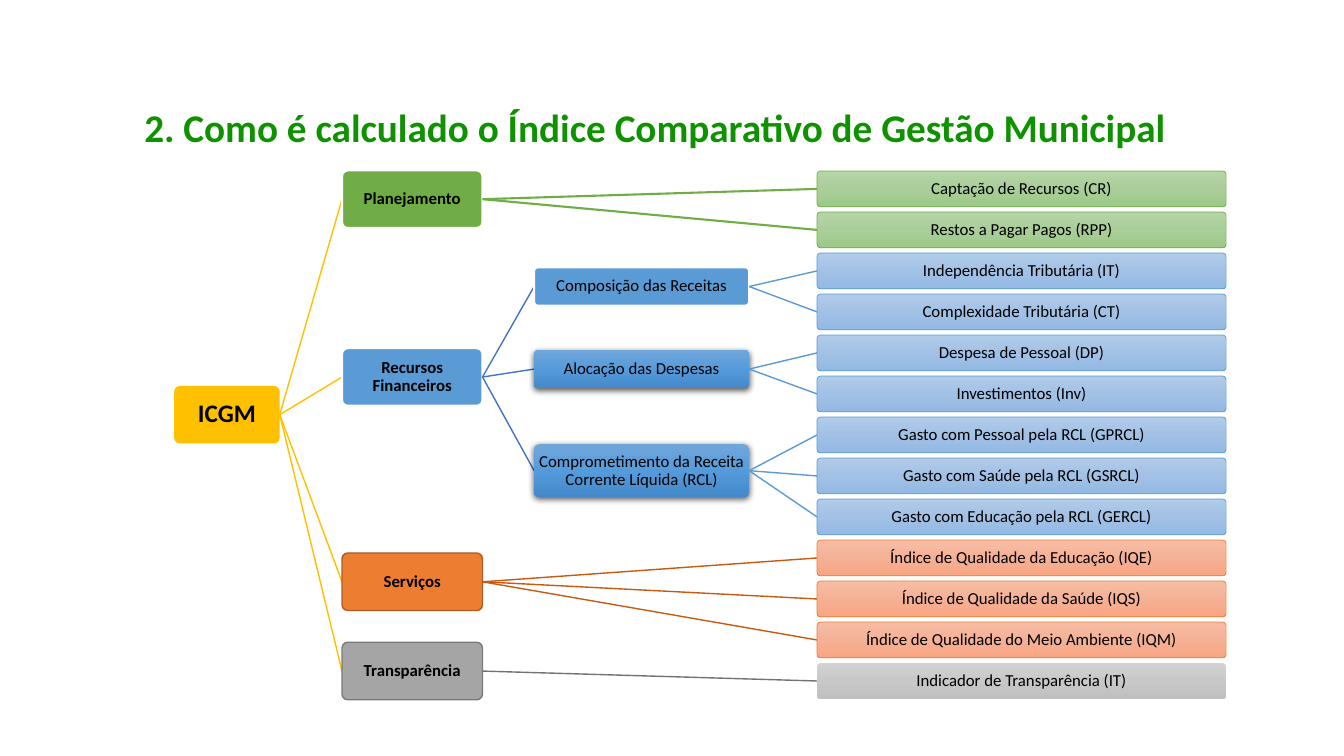
from copy import deepcopy

from lxml import etree
from pptx import Presentation
from pptx.dml.color import RGBColor
from pptx.enum.shapes import MSO_CONNECTOR, MSO_SHAPE
from pptx.enum.text import MSO_ANCHOR, MSO_AUTO_SIZE, PP_ALIGN
from pptx.oxml.ns import qn
from pptx.util import Cm, Pt

TITLE = "2. Como é calculado o Índice Comparativo de Gestão Municipal"

# Each node: text, level, style, centre height in cm (None for evenly spaced indicators), children
TREE = ("ICGM", "root", "gold", 10.45, [
    ("Planejamento", "area", "green", 5.02, [
        ("Captação de Recursos (CR)", "indicator", "light green", None, []),
        ("Restos a Pagar Pagos (RPP)", "indicator", "light green", None, []),
    ]),
    ("Recursos Financeiros", "area", "blue", 9.5, [
        ("Composição das Receitas", "group", "flat blue", 7.22, [
            ("Independência Tributária (IT)", "indicator", "light blue", None, []),
            ("Complexidade Tributária (CT)", "indicator", "light blue", None, []),
        ]),
        ("Alocação das Despesas", "group", "raised blue", 9.3, [
            ("Despesa de Pessoal (DP)", "indicator", "light blue", None, []),
            ("Investimentos (Inv)", "indicator", "light blue", None, []),
        ]),
        ("Comprometimento da Receita Corrente Líquida (RCL)", "tall group", "raised blue", 11.86, [
            ("Gasto com Pessoal pela RCL (GPRCL)", "indicator", "light blue", None, []),
            ("Gasto com Saúde pela RCL (GSRCL)", "indicator", "light blue", None, []),
            ("Gasto com Educação pela RCL (GERCL)", "indicator", "light blue", None, []),
        ]),
    ]),
    ("Serviços", "area", "orange", 14.66, [
        ("Índice de Qualidade da Educação (IQE)", "indicator", "light orange", None, []),
        ("Índice de Qualidade da Saúde (IQS)", "indicator", "light orange", None, []),
        ("Índice de Qualidade do Meio Ambiente (IQM)", "indicator", "light orange", None, []),
    ]),
    ("Transparência", "area", "gray", 16.91, [
        ("Indicador de Transparência (IT)", "indicator", "light gray", None, []),
    ]),
])

# Left, width, height in cm, then font size and weight
LEVELS = {
    "root": (4.39, 2.66, 1.45, 18, True),
    "area": (8.62, 3.54, 1.45, 12, True),
    "group": (13.46, 5.42, 0.97, 12, False),
    "tall group": (13.46, 5.42, 1.33, 12, False),
    "indicator": (20.59, 10.31, 0.9, 12, False),
}
FIRST_INDICATOR, LAST_INDICATOR, INDICATOR_COUNT = 4.76, 17.16, 13
PITCH = (LAST_INDICATOR - FIRST_INDICATOR) / (INDICATOR_COUNT - 1)

# Fill colours (three make a gradient), outline, link to the children
STYLES = {
    "gold": (["FFC000"], None, ("FFC000", 1)),
    "green": (["70AD47"], ("FFFFFF", 1.5), ("70AD47", 1.5)),
    "blue": (["5B9BD5"], ("FFFFFF", 1.5), ("4472C4", 1)),
    "orange": (["ED7D31"], ("AF5C24", 1), ("C55A11", 1)),
    "gray": (["A5A5A5"], ("7A7A7A", 1), ("767171", 1)),
    "flat blue": (["5B9BD5"], ("FFFFFF", 1.5), ("5B9BD5", 1)),
    "raised blue": (["71A6DB", "559BDB", "448ACA"], None, ("5B9BD5", 1)),
    "light green": (["B5D5A7", "AACE9A", "9CC987"], ("70AD47", 0.5), None),
    "light blue": (["B1CBE9", "A3C1E5", "93B9E4"], ("5B9BD5", 0.5), None),
    "light orange": (["F7BDA5", "F5B196", "F8A582"], ("ED7D31", 0.5), None),
    "light gray": (["D2D2D2", "C8C8C8", "C0C0C0"], None, None),
}


def rgb(code):
    return RGBColor.from_string(code)


def paint(shape, colours):
    if len(colours) == 1:
        shape.fill.solid()
        shape.fill.fore_color.rgb = rgb(colours[0])
        return
    shape.fill.gradient()
    shape.fill.gradient_angle = 270
    stop_list = shape._element.spPr.find(qn("a:gradFill")).find(qn("a:gsLst"))
    stop_list.insert(1, deepcopy(stop_list[0]))
    for stop, colour, position in zip(shape.fill.gradient_stops, colours, (0, 0.5, 1)):
        stop.color.rgb = rgb(colour)
        stop.position = position


def outline(line, look):
    if look is None:
        line.fill.background()
        return
    colour, width = look
    line.color.rgb = rgb(colour)
    line.width = Pt(width)


def raise_shape(shape):
    """Add a soft shadow below the shape."""
    effects = shape._element.spPr.find(qn("a:effectLst"))
    shadow = etree.SubElement(effects, qn("a:outerShdw"), blurRad=str(Pt(4.5)),
                              dist=str(Pt(1.5)), dir="5400000", algn="ctr", rotWithShape="0")
    colour = etree.SubElement(shadow, qn("a:srgbClr"), val="000000")
    etree.SubElement(colour, qn("a:alpha"), val="63000")


def write(shape, text, colour, size, bold, frame_format):
    frame = shape.text_frame
    for name, value in frame_format.items():
        setattr(frame, name, value)
    para = frame.paragraphs[0]
    para.alignment = PP_ALIGN.CENTER
    span = para.add_run()
    span.text = text
    for name, value in {"name": "Calibri", "size": Pt(size), "bold": bold}.items():
        setattr(span.font, name, value)
    span.font.color.rgb = rgb(colour)
    return para


def add_link(page, start, end, look):
    link = page.shapes.add_connector(MSO_CONNECTOR.STRAIGHT, *map(Cm, start + end))
    outline(link.line, look)
    etree.SubElement(link._element.spPr, qn("a:effectLst"))


def add_node(page, node, rows, parent_end=None, parent_link=None):
    """Draw a node after its incoming link, then all its children."""
    text, level, style, middle, children = node
    left, width, height, size, bold = LEVELS[level]
    fill, border, link = STYLES[style]
    if middle is None:
        middle = next(rows)
    if parent_end:
        add_link(page, parent_end, (left, middle), parent_link)
    box = page.shapes.add_shape(MSO_SHAPE.ROUNDED_RECTANGLE, Cm(left), Cm(middle - height / 2),
                                Cm(width), Cm(height))
    box.adjustments[0] = 0.1
    box.shadow.inherit = False
    paint(box, fill)
    outline(box.line, border)
    if style == "raised blue":
        raise_shape(box)
    margins = {f"margin_{side}": Cm(0.03) for side in ("left", "right", "top", "bottom")}
    para = write(box, text, "000000", size, bold,
                 {"word_wrap": True, "vertical_anchor": MSO_ANCHOR.MIDDLE, **margins})
    para.line_spacing = 0.9
    for child in children:
        add_node(page, child, rows, (left + width, middle), link)


def main():
    deck = Presentation()
    deck.slide_width, deck.slide_height = Cm(33.87), Cm(19.05)
    page = deck.slides.add_slide(deck.slide_layouts[6])
    rows = (FIRST_INDICATOR + PITCH * row for row in range(INDICATOR_COUNT))
    add_node(page, TREE, rows)
    title = page.shapes.add_textbox(Cm(3), Cm(2.49), Cm(27), Cm(1.45))
    write(title, TITLE, "0F9200", 28, True,
          {"word_wrap": True, "auto_size": MSO_AUTO_SIZE.SHAPE_TO_FIT_TEXT})
    deck.save("out.pptx")


if __name__ == "__main__":
    main()
